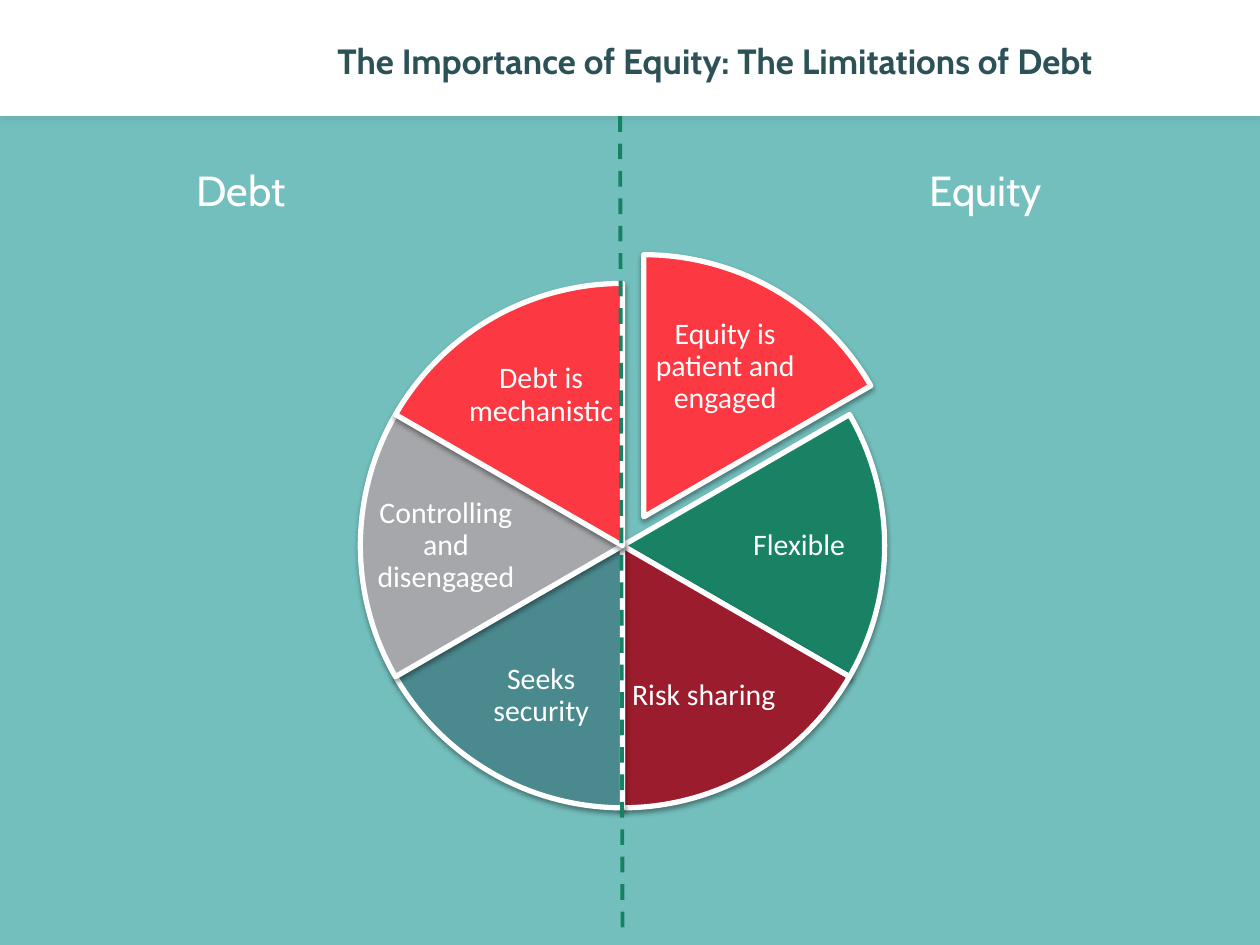
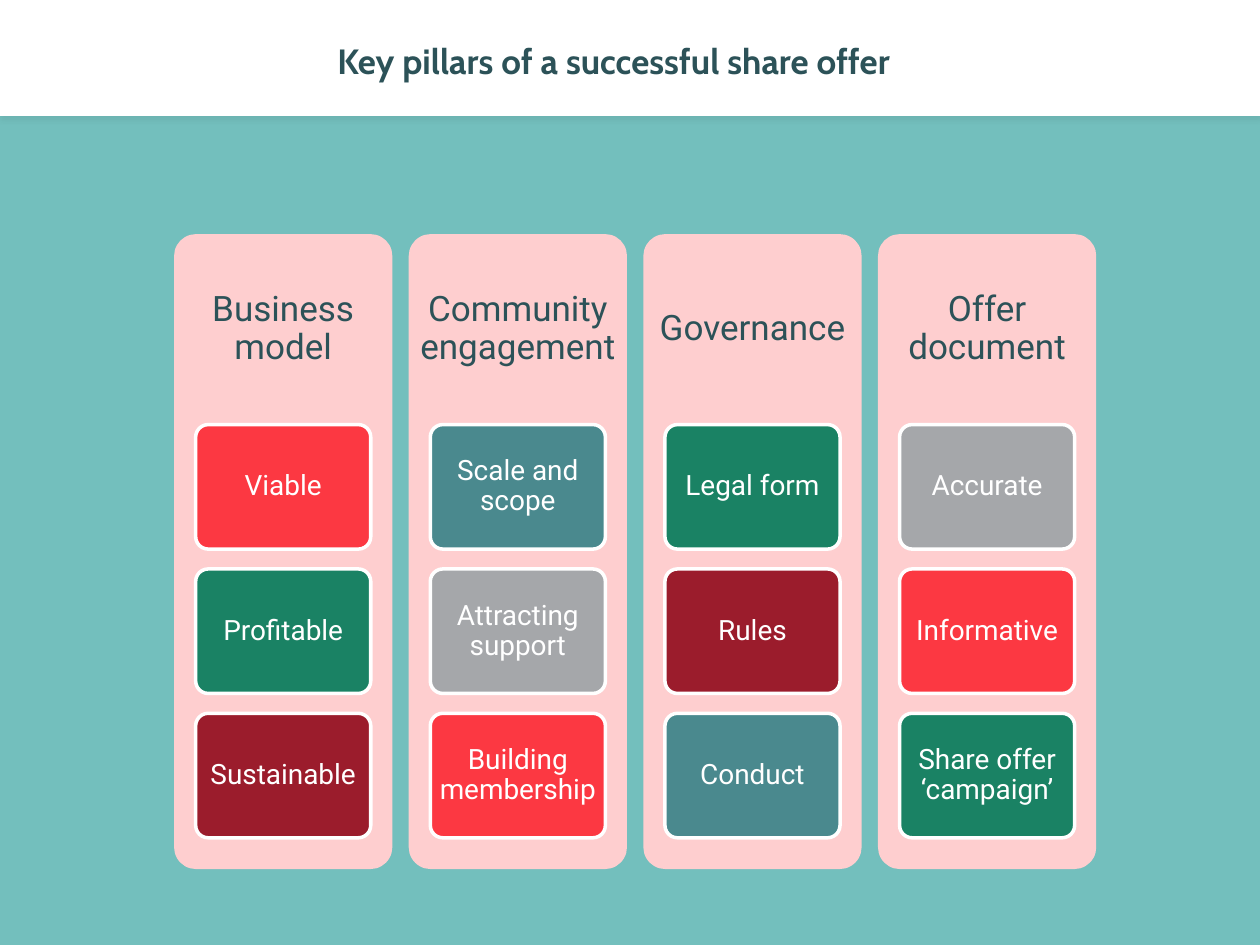
from lxml import etree
from pptx import Presentation
from pptx.dml.color import RGBColor
from pptx.enum.dml import MSO_LINE
from pptx.enum.shapes import MSO_CONNECTOR, MSO_SHAPE
from pptx.enum.text import MSO_ANCHOR, PP_ALIGN
from pptx.oxml.ns import qn
from pptx.util import Cm, Pt

RECTANGLE, ROUNDED, PIE = MSO_SHAPE.RECTANGLE, MSO_SHAPE.ROUNDED_RECTANGLE, MSO_SHAPE.PIE
STRAIGHT, DASH = MSO_CONNECTOR.STRAIGHT, MSO_LINE.DASH
TOP, MIDDLE = MSO_ANCHOR.TOP, MSO_ANCHOR.MIDDLE
LEFT, CENTER = PP_ALIGN.LEFT, PP_ALIGN.CENTER

# Shared look
SLIDE_WIDTH, SLIDE_HEIGHT, BAND_HEIGHT = 25.4, 19.05, 2.34
BACKGROUND, WHITE, INK = "73BFBD", "FFFFFF", "2C5258"
PINK, DIVIDER_GREEN = "FECECF", "178263"
CYCLE = ["FC3842", "1A8264", "9B1C2C", "4A898E", "A5A7AA"]

# Content: slices run clockwise from the top, with label centres from the pie centre
DEBT_TITLE = "The Importance of Equity: The Limitations of Debt"
SLICES = [
    ("Equity is patient and engaged", 1.64, -3.03),
    ("Flexible", 3.56, 0),
    ("Risk sharing", 1.64, 3.03),
    ("Seeks security", -1.64, 3.03),
    ("Controlling and disengaged", -3.56, 0),
    ("Debt is mechanistic", -1.64, -3.03),
]
SIDES = [("Debt", 3.71, 2.4), ("Equity", 18.49, 6.4)]

PILLARS_TITLE = "Key pillars of a successful share offer"
PILLARS = [
    ("Business model", ["Viable", "Profitable", "Sustainable"]),
    ("Community engagement", ["Scale and scope", "Attracting support", "Building membership"]),
    ("Governance", ["Legal form", "Rules", "Conduct"]),
    ("Offer document", ["Accurate", "Informative", "Share offer ‘campaign’"]),
]

# Geometry in centimetres
PIE_X, PIE_Y, PIE_SIZE = 12.55, 11.0, 10.57
PULL_X, PULL_Y = 0.43, -0.58
PILLAR_LEFT, PILLAR_TOP, PILLAR_STEP = 3.51, 4.72, 4.73
PILLAR_WIDTH, PILLAR_HEIGHT, HEADING_HEIGHT = 4.4, 12.8, 3.84
CARD_WIDTH, CARD_HEIGHT, CARD_STEP = 3.53, 2.51, 2.91


def color(value):
    return RGBColor.from_string(value)


def write(shape, text, font, size, ink, bold=False, align=CENTER, anchor=MIDDLE,
          insets=(0.25, 0.13), spacing=None):
    frame = shape.text_frame
    frame.word_wrap = True
    frame.vertical_anchor = anchor
    frame.margin_left = frame.margin_right = Cm(insets[0])
    frame.margin_top = frame.margin_bottom = Cm(insets[1])
    frame.text = text
    para = frame.paragraphs[0]
    para.alignment = align
    para.line_spacing = spacing
    span = para.runs[0].font
    span.name, span.size, span.bold = font, Pt(size), bold
    span.color.rgb = color(ink)


def add_text(page, left, top, width, height, *args, **style):
    box = page.shapes.add_textbox(Cm(left), Cm(top), Cm(width), Cm(height))
    write(box, *args, **style)


def add_block(page, kind, left, top, width, height, fill, outline=0):
    block = page.shapes.add_shape(kind, Cm(left), Cm(top), Cm(width), Cm(height))
    block.shadow.inherit = False
    block.fill.solid()
    block.fill.fore_color.rgb = color(fill)
    if outline:
        block.line.color.rgb = color(WHITE)
        block.line.width = Pt(outline)
    else:
        block.line.fill.background()
    return block


def drop_shadow(shape, opacity, distance):
    """Cast a soft black shadow straight down."""
    effects = shape._element.spPr.find(qn("a:effectLst"))
    shadow = etree.SubElement(effects, qn("a:outerShdw"), blurRad=str(Pt(3.1)),
                              dist=str(Pt(distance)), dir="5400000", rotWithShape="0")
    black = etree.SubElement(shadow, qn("a:srgbClr"), val="000000")
    etree.SubElement(black, qn("a:alpha"), val=str(opacity * 1000))


def add_page(deck, title):
    page = deck.slides.add_slide(deck.slide_layouts[6])
    page.background.fill.solid()
    page.background.fill.fore_color.rgb = color(BACKGROUND)
    band = add_block(page, RECTANGLE, 0, 0, SLIDE_WIDTH, BAND_HEIGHT, WHITE)
    drop_shadow(band, 5, 1.8)
    add_text(page, 6.55, 0.43, 18.85, 1.57, title, "Cabin", 20, INK, bold=True, align=LEFT)
    return page


def build_debt_page(deck):
    page = add_page(deck, DEBT_TITLE)

    # Six equal slices, the first pulled out
    sweep = 360 / len(SLICES)
    for index, (label, label_x, label_y) in enumerate(SLICES):
        x, y = (PIE_X + PULL_X, PIE_Y + PULL_Y) if index == 0 else (PIE_X, PIE_Y)
        piece = add_block(page, PIE, x - PIE_SIZE / 2, y - PIE_SIZE / 2, PIE_SIZE, PIE_SIZE,
                          CYCLE[index % len(CYCLE)], 3)
        for edge in (0, 1):
            # Pie adjustments count 0.6 per degree
            piece.adjustments[edge] = (270 + sweep * (index + edge)) % 360 * 0.6
        drop_shadow(piece, 38, 1.6)
        width, height = (3.07, 2.26) if label_y else (3.2, 2.13)
        add_text(page, x + label_x - width / 2, y + label_y - height / 2, width, height,
                 label, "Calibri", 17, WHITE, insets=(0.05, 0.05), spacing=0.9)

    # Divider between the two sides
    divider = page.shapes.add_connector(STRAIGHT, Cm(12.5), Cm(BAND_HEIGHT), Cm(12.55), Cm(18.85))
    divider.line.color.rgb = color(DIVIDER_GREEN)
    divider.line.width = Pt(2.25)
    divider.line.dash_style = DASH
    etree.SubElement(divider._element.spPr, qn("a:effectLst"))

    for side, left, width in SIDES:
        add_text(page, left, 3.18, width, 1.27, side, "Cabin", 24, WHITE, align=LEFT, anchor=TOP)


def build_pillars_page(deck):
    page = add_page(deck, PILLARS_TITLE)
    for column, (heading, cards) in enumerate(PILLARS):
        # Pillar and its heading
        left = PILLAR_LEFT + column * PILLAR_STEP
        pillar = add_block(page, ROUNDED, left, PILLAR_TOP, PILLAR_WIDTH, PILLAR_HEIGHT, PINK)
        pillar.adjustments[0] = 0.1
        add_text(page, left, PILLAR_TOP, PILLAR_WIDTH, HEADING_HEIGHT, heading,
                 "Roboto", 20, INK, insets=(0.2, 0.2), spacing=0.9)

        # Cards, coloured in turn down each pillar
        for row, label in enumerate(cards):
            fill = CYCLE[(column * len(cards) + row) % len(CYCLE)]
            card = add_block(page, ROUNDED, left + (PILLAR_WIDTH - CARD_WIDTH) / 2,
                             PILLAR_TOP + HEADING_HEIGHT + row * CARD_STEP,
                             CARD_WIDTH, CARD_HEIGHT, fill, 2)
            card.adjustments[0] = 0.1
            write(card, label, "Roboto", 16, WHITE, insets=(0.09, 0.08), spacing=0.9)


def main():
    deck = Presentation()
    deck.slide_width, deck.slide_height = Cm(SLIDE_WIDTH), Cm(SLIDE_HEIGHT)
    build_debt_page(deck)
    build_pillars_page(deck)
    deck.save("out.pptx")


if __name__ == "__main__":
    main()
